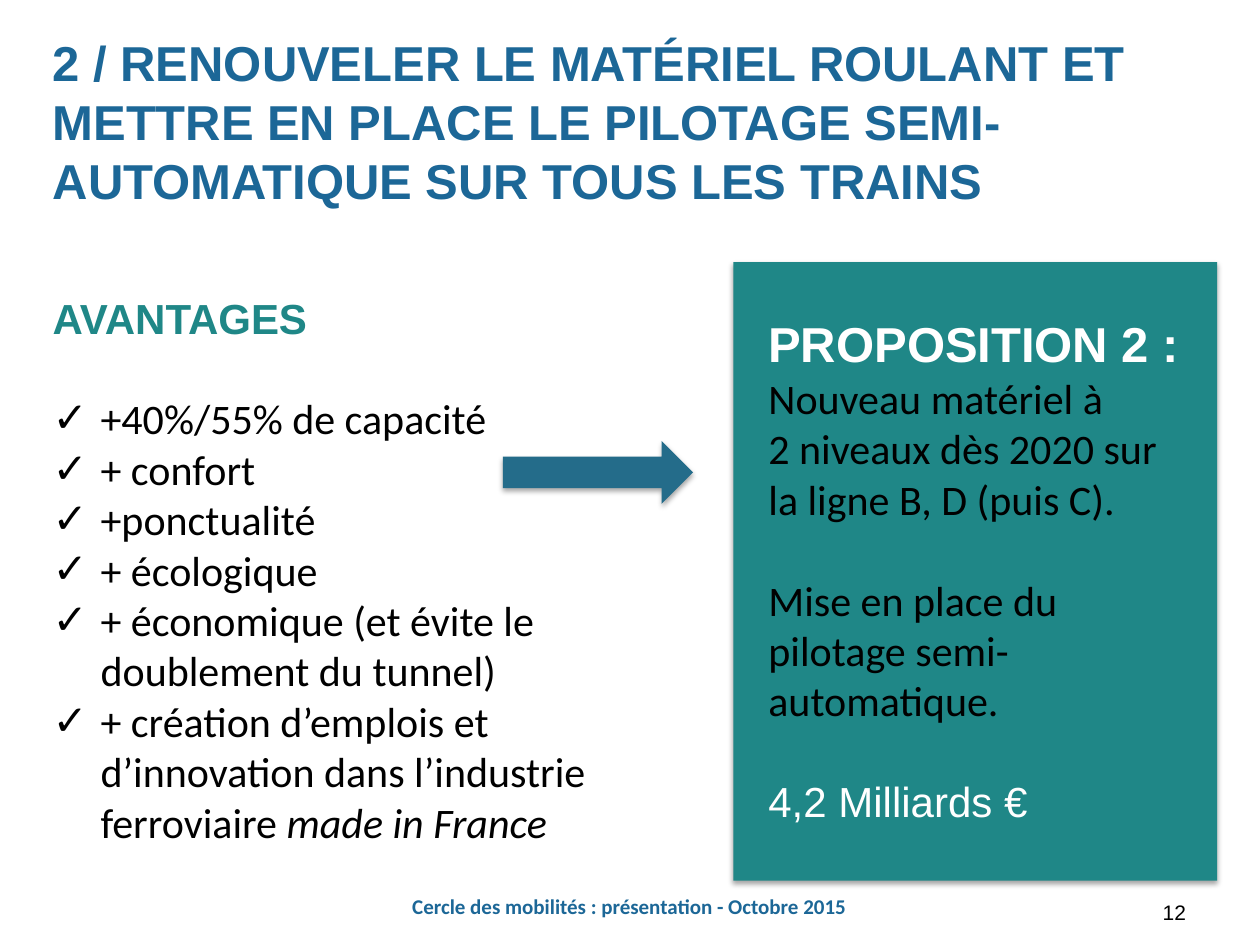
from dataclasses import dataclass

from lxml import etree
from pptx import Presentation
from pptx.dml.color import RGBColor
from pptx.enum.shapes import MSO_SHAPE
from pptx.enum.text import MSO_ANCHOR, MSO_AUTO_SIZE, PP_ALIGN
from pptx.oxml.ns import qn
from pptx.util import Inches, Pt

RECT, ARROW = MSO_SHAPE.RECTANGLE, MSO_SHAPE.RIGHT_ARROW
TOP, MIDDLE = MSO_ANCHOR.TOP, MSO_ANCHOR.MIDDLE
CENTER = PP_ALIGN.CENTER
FIT = MSO_AUTO_SIZE.SHAPE_TO_FIT_TEXT


@dataclass(frozen=True)
class Theme:
    """Colours, fonts and type sizes of the deck."""
    blue: str = "1C6797"
    teal: str = "1F8787"
    arrow: str = "246C8A"
    white: str = "FFFFFF"
    black: str = "000000"
    head: str = "Arial"
    body: str = "Calibri"
    title: int = 28
    text: int = 24
    small: int = 12
    leading: float = 1.2


T = Theme()
GAP = T.text * T.leading


def add_box(s, box, anchor=TOP, grow=False):
    """Add a wrapping text box and return its text frame."""
    tf = s.shapes.add_textbox(*map(Inches, box)).text_frame
    tf.word_wrap = True
    tf.vertical_anchor = anchor
    if grow:
        tf.auto_size = FIT
    return tf


def add_run(p, text, size=T.text, font=T.body, color=T.black, bold=False, italic=False):
    """Append a formatted run to a paragraph."""
    r = p.add_run()
    r.text = text
    f = r.font
    f.size, f.name, f.bold, f.italic = Pt(size), font, bold, italic
    f.color.rgb = RGBColor.from_string(color)


def add_text(tf, text, size=T.text, before=0, align=None, **fmt):
    """Add a paragraph with one run, using the first empty paragraph if free."""
    first = tf.paragraphs[0]
    p = tf.add_paragraph() if first.runs else first
    p.line_spacing = Pt(size * T.leading)
    p.space_before = Pt(before)
    p.alignment = align
    add_run(p, text, size=size, **fmt)
    return p


def add_check(p):
    """Give a paragraph a hanging check mark."""
    pPr = p._p.get_or_add_pPr()
    pPr.set("marL", str(Inches(0.38)))
    pPr.set("indent", str(-Inches(0.38)))
    etree.SubElement(pPr, qn("a:buFont")).set("typeface", T.head)
    etree.SubElement(pPr, qn("a:buChar")).set("char", "✓")


def add_block(s, kind, box, color):
    """Add a filled shape without outline and with a soft shadow below."""
    sp = s.shapes.add_shape(kind, *map(Inches, box))
    sp.fill.solid()
    sp.fill.fore_color.rgb = RGBColor.from_string(color)
    sp.line.fill.background()
    sp.shadow.inherit = False
    effects = sp._element.spPr.find(qn("a:effectLst"))
    shadow = etree.SubElement(effects, qn("a:outerShdw"), blurRad=str(Pt(3.1)),
                              dist=str(Pt(1.8)), dir="5400000", rotWithShape="0")
    clr = etree.SubElement(shadow, qn("a:srgbClr"), val=T.black)
    etree.SubElement(clr, qn("a:alpha"), val="35000")
    return sp


def add_title(s, box):
    """Place the slide title."""
    add_text(add_box(s, box),
             "2 / RENOUVELER LE MATÉRIEL ROULANT ET METTRE EN PLACE LE PILOTAGE "
             "SEMI-AUTOMATIQUE SUR TOUS LES TRAINS",
             size=T.title, font=T.head, color=T.blue, bold=True)


def add_benefits(s, box):
    """Place the heading and the checked list of benefits."""
    tf = add_box(s, box, grow=True)
    add_text(tf, "AVANTAGES", font=T.head, color=T.teal, bold=True)
    items = ["+40%/55% de capacité", "+ confort", "+ponctualité", "+ écologique",
             "+ économique (et évite le doublement du tunnel)",
             "+ création d’emplois et d’innovation dans l’industrie ferroviaire "]
    for i, item in enumerate(items):
        p = add_text(tf, item, before=0 if i else GAP)
        add_check(p)
    add_run(p, "made in France", italic=True)


def add_proposal(s, box):
    """Place the teal panel with the proposal text inside."""
    x, y, w, h = box
    add_block(s, RECT, box, T.teal)
    tf = add_box(s, (x + 0.18, y + 0.36, w - 0.32, h - 0.7), grow=True)
    add_text(tf, "PROPOSITION 2 :", size=T.title, font=T.head, color=T.white, bold=True)
    add_text(tf, "Nouveau matériel à")
    add_text(tf, "2 niveaux dès 2020 sur la ligne B, D (puis C).")
    add_text(tf, "Mise en place du pilotage semi-automatique.", before=GAP)
    add_text(tf, "4,2 Milliards €", before=GAP, font=T.head, color=T.white)


def add_footer(s, box, number_box):
    """Place the centred footer and the page number."""
    add_text(add_box(s, box, anchor=MIDDLE),
             "Cercle des mobilités : présentation - Octobre 2015",
             size=T.small, align=CENTER, color=T.blue, bold=True)
    add_text(add_box(s, number_box), "12", size=T.small, font=T.head)


def main():
    """Build and save the slide."""
    prs = Presentation()
    prs.slide_width, prs.slide_height = Inches(10), Inches(7.5)
    s = prs.slides.add_slide(prs.slide_layouts[6])
    add_footer(s, (1.09, 7, 7.81, 0.39), (9.13, 7.09, 2.33, 0.4))
    add_proposal(s, (5.82, 2.08, 3.84, 4.91))
    add_title(s, (0.32, 0.21, 9.2, 1.87))
    add_block(s, ARROW, (3.99, 3.5, 1.51, 0.5), T.arrow)
    add_benefits(s, (0.32, 2.27, 5.02, 4.54))
    prs.save("out.pptx")


if __name__ == "__main__":
    main()
